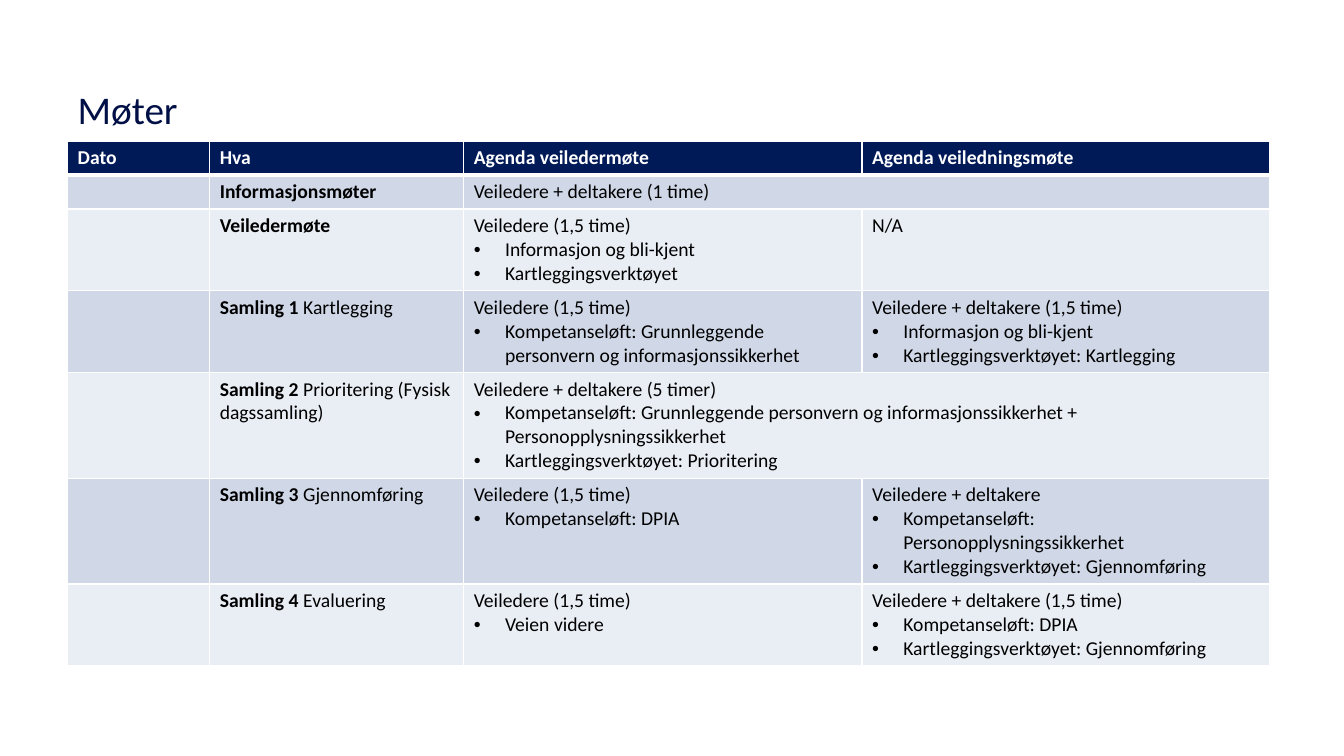
from lxml.etree import SubElement
from pptx import Presentation
from pptx.dml.color import RGBColor
from pptx.enum.text import MSO_ANCHOR, PP_ALIGN
from pptx.oxml.ns import qn
from pptx.util import Inches, Pt

TITLE = "Møter"
FONT = "Calibri"
NAVY, TITLE_NAVY, WHITE, BLACK = "001A58", "001046", "FFFFFF", "000000"
BANDS = ["D0D8E8", "E9EDF4"]
COLUMN_WIDTHS = [1.41, 2.52, 3.95, 4.04]
ROW_HEIGHTS = [0.33, 0.33, 0.81, 0.81, 1.05, 1.05, 0.81]
HEADINGS = ["Dato", "Hva", "Agenda veiledermøte", "Agenda veiledningsmøte"]
MEETINGS = [
    ("Informasjonsmøter", "", ["Veiledere + deltakere (1 time)"], None),
    ("Veiledermøte", "",
     ["Veiledere (1,5 time)", "Informasjon og bli-kjent", "Kartleggingsverktøyet"],
     ["N/A"]),
    ("Samling 1", " Kartlegging",
     ["Veiledere (1,5 time)",
      "Kompetanseløft: Grunnleggende personvern og informasjonssikkerhet"],
     ["Veiledere + deltakere (1,5 time)", "Informasjon og bli-kjent",
      "Kartleggingsverktøyet: Kartlegging"]),
    ("Samling 2", " Prioritering (Fysisk dagssamling)",
     ["Veiledere + deltakere (5 timer)",
      "Kompetanseløft: Grunnleggende personvern og informasjonssikkerhet + "
      "Personopplysningssikkerhet",
      "Kartleggingsverktøyet: Prioritering"], None),
    ("Samling 3", " Gjennomføring",
     ["Veiledere (1,5 time)", "Kompetanseløft: DPIA"],
     ["Veiledere + deltakere", "Kompetanseløft: Personopplysningssikkerhet",
      "Kartleggingsverktøyet: Gjennomføring"]),
    ("Samling 4", " Evaluering",
     ["Veiledere (1,5 time)", "Veien videre"],
     ["Veiledere + deltakere (1,5 time)", "Kompetanseløft: DPIA",
      "Kartleggingsverktøyet: Gjennomføring"]),
]


def color(value):
    return RGBColor.from_string(value)


def style(para, size, text_color, bold=None):
    para.font.name = FONT
    para.font.size = Pt(size)
    para.font.color.rgb = color(text_color)
    para.font.bold = bold


def format_cell(cell, fill, bottom_width):
    properties = cell._tc.get_or_add_tcPr()
    for side, width in [("L", 1), ("R", 1), ("T", 1), ("B", bottom_width)]:
        line = SubElement(properties, qn(f"a:ln{side}"), w=str(Pt(width)))
        solid = SubElement(line, qn("a:solidFill"))
        SubElement(solid, qn("a:srgbClr"), val=WHITE)
    cell.fill.solid()
    cell.fill.fore_color.rgb = color(fill)
    style(cell.text_frame.paragraphs[0], 14, BLACK, False)


def write_agenda(cell, lines):
    frame = cell.text_frame
    frame.text = "\n".join(lines)
    for index, para in enumerate(frame.paragraphs):
        if index:
            properties = para._p.get_or_add_pPr()
            properties.set("marL", str(Inches(0.31)))
            properties.set("indent", str(Inches(-0.31)))
            SubElement(properties, qn("a:buFont"), typeface="Arial")
            SubElement(properties, qn("a:buChar"), char="•")
        style(para, 14, BLACK, False)


def write_meeting(cell, name, topic):
    para = cell.text_frame.paragraphs[0]
    span = para.add_run()
    span.text = name
    span.font.bold = True
    if topic:
        para.add_run().text = topic


def add_title(page):
    title = page.shapes.title
    title.left, title.top = Inches(0.67), Inches(0.8)
    title.width, title.height = Inches(12), Inches(1.24)
    frame = title.text_frame
    frame.text = TITLE
    frame.vertical_anchor = MSO_ANCHOR.TOP
    para = frame.paragraphs[0]
    para.alignment = PP_ALIGN.LEFT
    style(para, 28, TITLE_NAVY)


def add_schedule(page):
    table = page.shapes.add_table(
        len(ROW_HEIGHTS), len(COLUMN_WIDTHS), Inches(0.67), Inches(1.4),
        Inches(sum(COLUMN_WIDTHS)), Inches(sum(ROW_HEIGHTS))).table
    for column, width in zip(table.columns, COLUMN_WIDTHS):
        column.width = Inches(width)
    for index, (row, height) in enumerate(zip(table.rows, ROW_HEIGHTS)):
        row.height = Inches(height)
        for cell in row.cells:
            if index:
                format_cell(cell, BANDS[(index - 1) % 2], 1)
            else:
                format_cell(cell, NAVY, 3)

    for cell, heading in zip(table.rows[0].cells, HEADINGS):
        cell.text = heading
        style(cell.text_frame.paragraphs[0], 14, WHITE, True)

    for index, (name, topic, advisers, guidance) in enumerate(MEETINGS, 1):
        write_meeting(table.cell(index, 1), name, topic)
        write_agenda(table.cell(index, 2), advisers)
        if guidance:
            write_agenda(table.cell(index, 3), guidance)
        else:
            table.cell(index, 2).merge(table.cell(index, 3))


def main():
    deck = Presentation()
    deck.slide_width, deck.slide_height = Inches(13.33), Inches(7.5)
    page = deck.slides.add_slide(deck.slide_layouts[5])
    add_title(page)
    add_schedule(page)
    deck.save("out.pptx")


if __name__ == "__main__":
    main()
